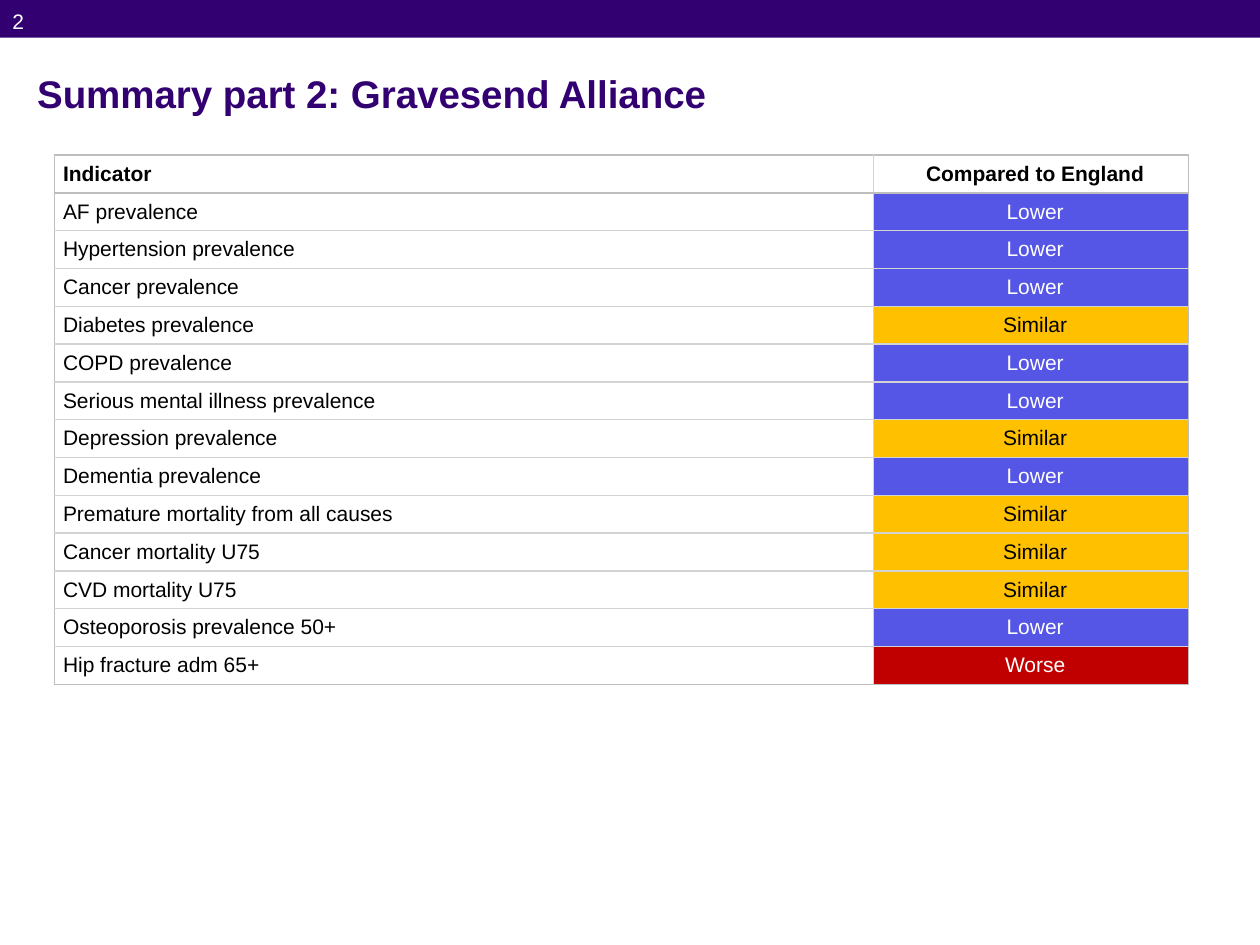
import pptx
import pptx.util
import pptx.dml.color
import pptx.enum.shapes
import pptx.enum.text
import pptx.oxml
import pptx.oxml.ns

Pt = pptx.util.Pt
ALIGN = pptx.enum.text.PP_ALIGN
ANCHOR = pptx.enum.text.MSO_ANCHOR

COLOURS = {
    "purple": "330072",
    "white": "FFFFFF",
    "black": "000000",
    "blue": "5555E6",
    "amber": "FFC000",
    "red": "C00000",
    "outer": "BEBEBE",
    "inner": "D3D3D3",
}

# Rating: (fill, text colour)
RATINGS = {
    "Lower": ("blue", "white"),
    "Similar": ("amber", "black"),
    "Worse": ("red", "white"),
}

HEADER = ("Indicator", "Compared to England")
INDICATORS = [
    ("AF prevalence", "Lower"),
    ("Hypertension prevalence", "Lower"),
    ("Cancer prevalence", "Lower"),
    ("Diabetes prevalence", "Similar"),
    ("COPD prevalence", "Lower"),
    ("Serious mental illness prevalence", "Lower"),
    ("Depression prevalence", "Similar"),
    ("Dementia prevalence", "Lower"),
    ("Premature mortality from all causes", "Similar"),
    ("Cancer mortality U75", "Similar"),
    ("CVD mortality U75", "Similar"),
    ("Osteoporosis prevalence 50+", "Lower"),
    ("Hip fracture adm 65+", "Worse"),
]


class SlideBuilder:
    """Holds the style and the current slide."""

    font = "Arial"

    def __init__(self, slide):
        self.slide = slide

    def rgb(self, name):
        return pptx.dml.color.RGBColor.from_string(COLOURS[name])

    def style(self, p, size, colour, bold=False, align=ALIGN.LEFT):
        p.alignment = align
        p.font.name = self.font
        p.font.size = Pt(size)
        p.font.bold = bold
        p.font.color.rgb = self.rgb(colour)

    def bar(self, x, y, w, h, colour):
        sp = self.slide.shapes.add_shape(
            pptx.enum.shapes.MSO_SHAPE.RECTANGLE, Pt(x), Pt(y), Pt(w), Pt(h))
        sp.shadow.inherit = False
        sp.fill.solid()
        sp.fill.fore_color.rgb = self.rgb(colour)
        sp.line.fill.background()

    def text(self, x, y, w, h, text, size, colour, bold=False, top=0):
        tf = self.slide.shapes.add_textbox(Pt(x), Pt(y), Pt(w), Pt(h)).text_frame
        tf.word_wrap = True
        tf.margin_top, tf.margin_bottom = Pt(top), 0
        p = tf.paragraphs[0]
        p.text = text
        self.style(p, size, colour, bold)

    def border(self, cell, side, colour):
        ns = pptx.oxml.ns.nsdecls("a")
        line = pptx.oxml.parse_xml(
            f'<a:{side} {ns} w="12700"><a:solidFill>'
            f'<a:srgbClr val="{COLOURS[colour]}"/></a:solidFill></a:{side}>')
        cell._tc.get_or_add_tcPr().append(line)

    def cell(self, cell, text, colour, fill, bold, align, borders):
        cell.margin_left = cell.margin_right = 0
        cell.margin_top = cell.margin_bottom = 0
        cell.vertical_anchor = ANCHOR.MIDDLE
        # Borders come before the fill in the cell properties
        for side, line_colour in borders.items():
            self.border(cell, side, line_colour)
        if fill:
            cell.fill.solid()
            cell.fill.fore_color.rgb = self.rgb(fill)
        else:
            cell.fill.background()
        p = cell.text_frame.paragraphs[0]
        p.text = text
        p.space_before = p.space_after = Pt(5)
        p._p.get_or_add_pPr().set("marL", str(Pt(5)))
        self.style(p, 12, colour, bold, align)

    def table(self, x, y, widths, row_height, rows):
        last = len(rows) - 1
        frame = self.slide.shapes.add_table(
            len(rows), len(widths), Pt(x), Pt(y),
            Pt(sum(widths)), Pt(row_height * len(rows)))
        table = frame.table
        table.first_row = table.horz_banding = False
        for column, width in zip(table.columns, widths):
            column.width = Pt(width)
        for i, row in enumerate(rows):
            table.rows[i].height = Pt(row_height)
            for j, text in enumerate(row):
                fill, colour = RATINGS.get(text, (None, "black"))
                borders = {
                    "lnL": "outer" if j == 0 else "inner",
                    "lnR": "inner" if j == 0 else "outer",
                    "lnT": "outer" if i <= 1 else "inner",
                    "lnB": "outer" if i in (0, last) else "inner",
                }
                align = ALIGN.CENTER if j else ALIGN.LEFT
                self.cell(table.cell(i, j), text, colour, fill, i == 0,
                          align, borders)


def main():
    prs = pptx.Presentation()
    prs.slide_width, prs.slide_height = Pt(720), Pt(540)
    s = SlideBuilder(prs.slides.add_slide(prs.slide_layouts[6]))

    # Top bar with the page number
    s.bar(0, 0, 720, 21.6, "purple")
    s.text(0, 0, 45, 45, "2", 12, "white", top=4.8)

    # Title
    s.text(14.2, 34, 692, 32.4, "Summary part 2: Gravesend Alliance",
           22, "purple", bold=True, top=5.8)

    # Indicator table
    s.table(31, 88.6, (468, 180), 21.6, [HEADER, *INDICATORS])

    prs.save("out.pptx")


if __name__ == "__main__":
    main()
